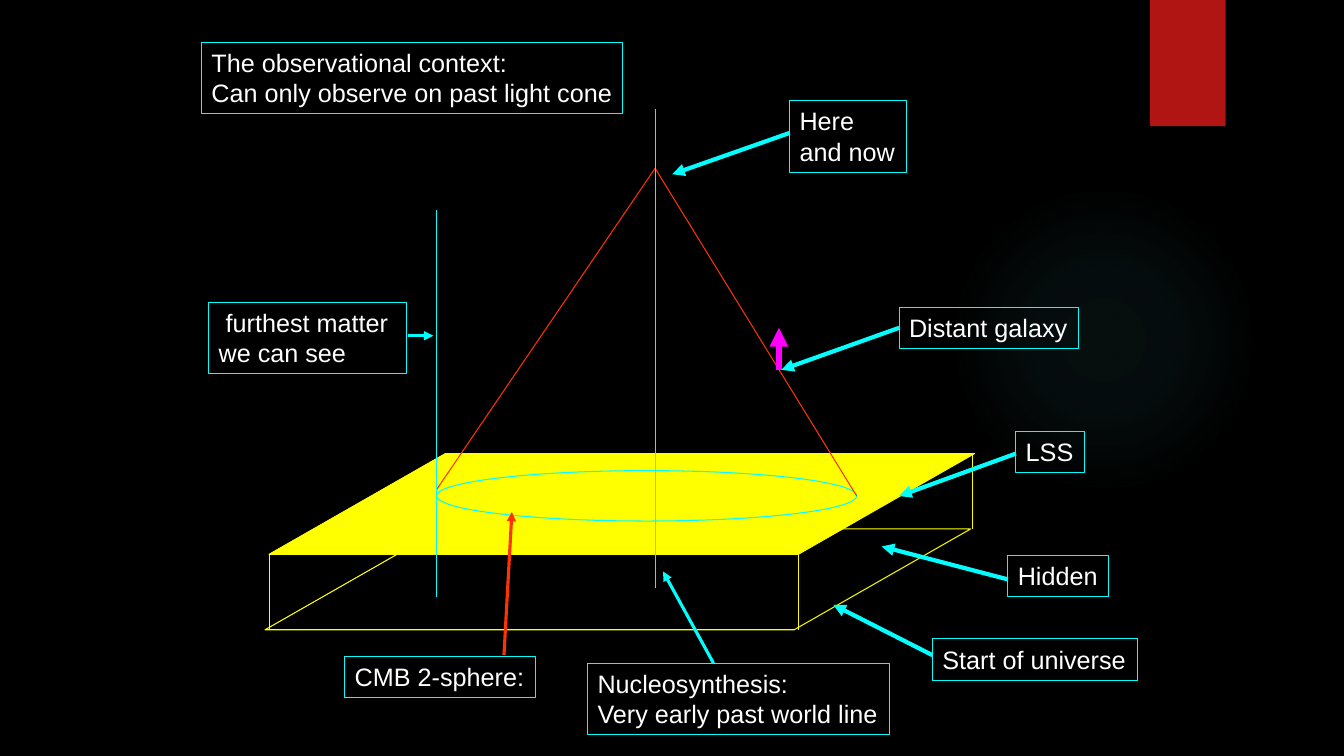
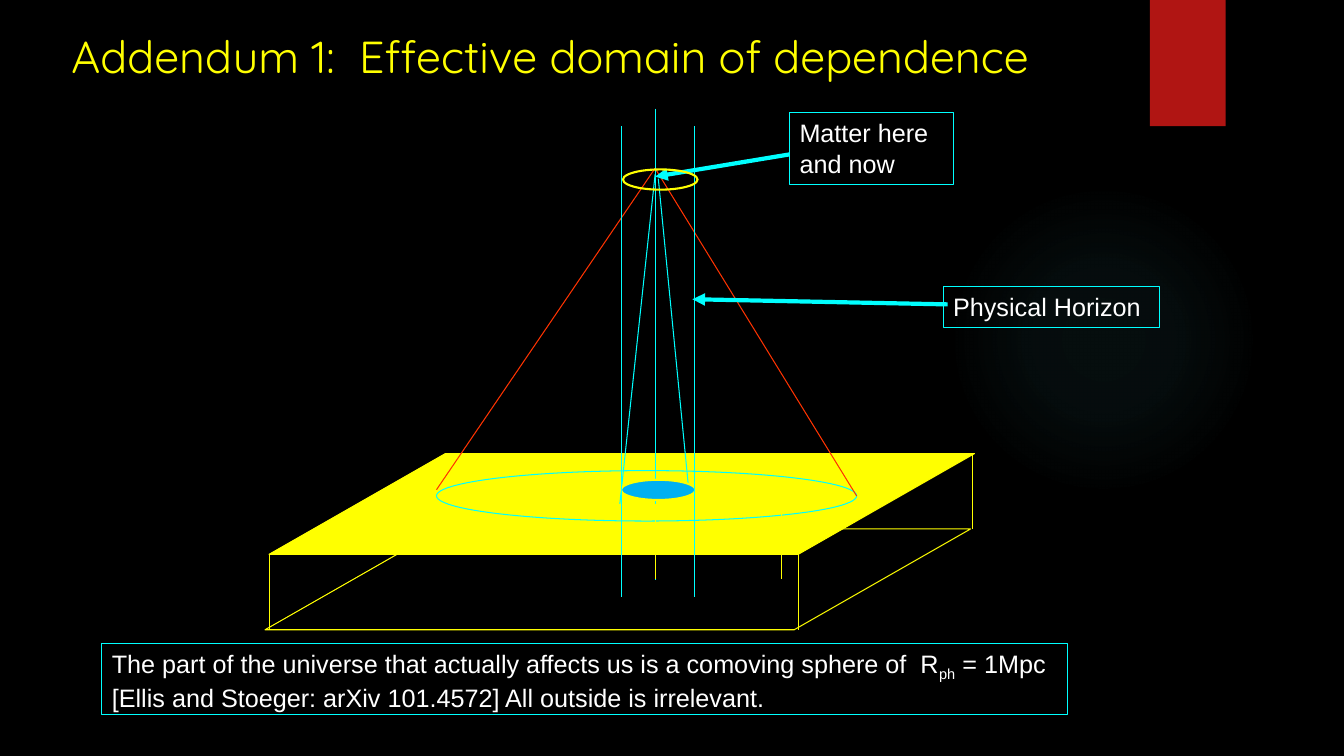
from dataclasses import dataclass
from typing import Any

from lxml.etree import SubElement
from pptx import Presentation
from pptx.dml.color import RGBColor
from pptx.enum.dml import MSO_LINE
from pptx.enum.shapes import MSO_CONNECTOR, MSO_SHAPE
from pptx.enum.text import MSO_ANCHOR, MSO_AUTO_SIZE, PP_ALIGN
from pptx.oxml import parse_xml
from pptx.oxml.ns import qn
from pptx.util import Cm, Pt

BLACK, WHITE, YELLOW = "000000", "FFFFFF", "FFFF00"
CYAN, RED, MAGENTA, BLUE = "00FFFF", "FF3300", "FF00FF", "00B0F0"
GLOW, TAB = "50B9C1", "B01513"
BODY_FONT, TITLE_FONT = "Arial", "Quicksand"
ONE_LINE, TWO_LINES = 1.04, 1.8
HAIRLINE = 0.75


def rgb(hex_code):
    return RGBColor.from_string(hex_code)


def add_run(paragraph, text, size, font, color, baseline=0):
    run = paragraph.add_run()
    run.text = text
    run.font.size = Pt(size)
    run.font.name = font
    run.font.color.rgb = rgb(color)
    if baseline:
        run._r.get_or_add_rPr().set("baseline", str(baseline * 1000))


@dataclass
class Stage:
    """An area of a slide; all its parts are placed in cm from its corner."""
    slide: Any
    left: float = 0
    top: float = 0

    def line(self, start, end, color=CYAN, width=HAIRLINE, arrow=False, dash=None):
        (x1, y1), (x2, y2) = start, end
        connector = self.slide.shapes.add_connector(
            MSO_CONNECTOR.STRAIGHT,
            Cm(self.left + x1), Cm(self.top + y1),
            Cm(self.left + x2), Cm(self.top + y2))
        connector.line.color.rgb = rgb(color)
        connector.line.width = Pt(width)
        if dash:
            connector.line.dash_style = dash
        if arrow:
            SubElement(connector.line._get_or_add_ln(), qn("a:tailEnd"), type="triangle")
        SubElement(connector._element.spPr, qn("a:effectLst"))

    def shape(self, kind, x, y, width, height, fill=None, outline=None, weight=HAIRLINE):
        shape = self.slide.shapes.add_shape(
            kind, Cm(self.left + x), Cm(self.top + y), Cm(width), Cm(height))
        shape.shadow.inherit = False
        if fill:
            shape.fill.solid()
            shape.fill.fore_color.rgb = rgb(fill)
        else:
            shape.fill.background()
        if outline:
            shape.line.color.rgb = rgb(outline)
            shape.line.width = Pt(weight)
        else:
            shape.line.fill.background()
        return shape

    def label(self, x, y, width, paragraphs, first_indent=0):
        """Framed text; each paragraph is a list of (text, baseline) runs."""
        height = TWO_LINES if len(paragraphs) > 1 else ONE_LINE
        frame = self.shape(MSO_SHAPE.RECTANGLE, x, y, width, height, outline=CYAN).text_frame
        frame.word_wrap = False
        frame.auto_size = MSO_AUTO_SIZE.SHAPE_TO_FIT_TEXT
        frame.vertical_anchor = MSO_ANCHOR.TOP
        for number, runs in enumerate(paragraphs):
            paragraph = frame.add_paragraph() if number else frame.paragraphs[0]
            paragraph.alignment = PP_ALIGN.LEFT
            if first_indent and not number:
                paragraph._p.get_or_add_pPr().set("indent", str(Cm(first_indent)))
            for text, baseline in runs:
                add_run(paragraph, text, 18, BODY_FONT, WHITE, baseline)

    def callout(self, x, y, width, lines, start, end, color=CYAN, weight=3, first_indent=0):
        self.label(x, y, width, [[(line, 0)] for line in lines], first_indent)
        self.line(start, end, color, weight, arrow=True)


def add_glow(stage):
    glow = stage.shape(MSO_SHAPE.OVAL, 23.9, 4.65, 7.82, 7.82, fill=GLOW)
    stops = "".join(
        f'<a:gs pos="{place * 1000}"><a:srgbClr val="{GLOW}">'
        f'<a:alpha val="{alpha * 1000}"/></a:srgbClr></a:gs>'
        for place, alpha in ((0, 7), (36, 6), (69, 0)))
    gradient = parse_xml(
        '<a:gradFill xmlns:a="http://schemas.openxmlformats.org/drawingml/2006/main">'
        f'<a:gsLst>{stops}</a:gsLst><a:path path="circle">'
        '<a:fillToRect l="50000" t="50000" r="50000" b="50000"/></a:path></a:gradFill>')
    properties = glow._element.spPr
    properties.replace(properties.find(qn("a:solidFill")), gradient)


def new_stage(deck):
    """Blank slide with the shared dark background, glow and red tab."""
    slide = deck.slides.add_slide(deck.slide_layouts[6])
    slide.background.fill.solid()
    slide.background.fill.fore_color.rgb = rgb(BLACK)
    stage = Stage(slide)
    add_glow(stage)
    stage.shape(MSO_SHAPE.RECTANGLE, 28.98, 0, 1.91, 3.18, fill=TAB)
    return stage


def add_slab(stage):
    """Last scattering surface above the start of the universe."""
    width, depth, drop = 17.78, 2.54, 1.9
    skew = 1.75 * depth
    for x, y, fill in ((0.1, 0, YELLOW), (0, drop, None)):
        sheet = stage.shape(MSO_SHAPE.PARALLELOGRAM, x, y, width, depth, fill, YELLOW)
        sheet.adjustments[0] = skew / depth
    for x, y, dash in ((0.1, depth, None), (0.1 + width - skew, depth, None),
                       (0.05 + width, 0, None), (0.1 + skew, 0.28, MSO_LINE.DASH_DOT)):
        stage.line((x, y), (x, y + drop), YELLOW, dash=dash)


def add_light_cone(stage, world_line_end):
    """Past light cone standing on the slab, with our world line."""
    axis, apex = 9.83, 1.5
    add_slab(Stage(stage.slide, stage.left, stage.top + 8.69))
    stage.shape(MSO_SHAPE.OVAL, 4.32, 9.12, 10.59, 1.27, outline=CYAN)
    for foot in ((4.32, 9.6), (14.91, 9.76)):
        stage.line((axis, apex), foot, RED)
    stage.line((axis, 0), (axis, world_line_end))


def add_title(stage, text):
    box = stage.slide.shapes.add_textbox(
        Cm(stage.left + 1.55), Cm(stage.top + 0.61), Cm(27.7), Cm(3.18))
    box.text_frame.word_wrap = True
    add_run(box.text_frame.paragraphs[0], text, 32, TITLE_FONT, YELLOW)


def context_slide(deck):
    stage = new_stage(deck)
    add_light_cone(Stage(stage.slide, 6.68, 2.74), 9.76)
    stage.line((16.51, 5.08), (16.51, 14.81))
    stage.line((11, 5.28), (11, 15.04))
    stage.label(5.08, 1.07, 10.62, [[("The observational context:", 0)],
                                    [("Can only observe on past light cone", 0)]])
    stage.line((19.63, 9.32), (19.63, 8.26), MAGENTA, 4.5, arrow=True)
    for x, y, width, lines, start, end in (
            (19.9, 2.54, 2.95, ["Here", "and now"], (19.9, 3.35), (16.94, 4.39)),
            (22.66, 7.75, 4.52, ["Distant galaxy"], (22.66, 8.26), (19.69, 9.32)),
            (25.6, 10.87, 1.73, ["LSS"], (25.6, 11.43), (22.66, 12.5)),
            (25.4, 14, 2.54, ["Hidden"], (25.4, 14.6), (22.22, 13.77)),
            (23.5, 16.1, 5.16, ["Start of universe"], (23.5, 16.51), (21, 15.24))):
        stage.callout(x, y, width, lines, start, end)
    stage.callout(8.69, 16.54, 4.8, ["CMB 2-sphere:"],
                  (12.7, 16.51), (12.9, 12.9), RED, 2.25)
    stage.callout(5.26, 7.62, 4.98, ["furthest matter", "we can see"],
                  (10.29, 8.46), (10.92, 8.46), weight=2.25, first_indent=0.18)
    stage.callout(14.81, 16.71, 7.62, ["Nucleosynthesis:", "Very early past world line"],
                  (17.98, 16.71), (16.71, 14.4), weight=2.25)


def add_horizon(stage):
    """Comoving tube around our world line, with its inner cone."""
    stage.line((0.84, 1.21), (-0.05, 9.52))
    stage.line((0.92, 1.32), (1.7, 9.29))
    stage.shape(MSO_SHAPE.OVAL, -0.02, 8.91, 1.88, 0.51, BLUE, YELLOW, 1.5)
    for x in (0, 1.83):
        stage.line((x, 0), (x, 11.86))
    stage.shape(MSO_SHAPE.OVAL, 0.03, 1.09, 1.88, 0.51, outline=YELLOW, weight=1.5)


def dependence_slide(deck):
    stage = new_stage(deck)
    add_light_cone(Stage(stage.slide, 6.68, 2.74), 11.87)
    stage.callout(19.9, 2.84, 4.14, ["Matter here", "and now"], (19.9, 3.89), (16.51, 4.45))
    for x in (16.51, 19.69):
        stage.line((x, 12.7), (x, 14.6), YELLOW)
    stage.callout(23.77, 7.21, 5.46, ["Physical Horizon"], (23.88, 7.67), (17.45, 7.54))
    add_title(stage, "Addendum 1:  Effective domain of dependence")
    stage.label(2.57, 16.21, 24.33, [
        [("The part of the universe that actually affects us is a comoving sphere of  R", 0),
         ("ph", -25), (" = 1Mpc", 0)],
        [("[Ellis and Stoeger: arXiv 101.4572] All outside is irrelevant.", 0)]])
    add_horizon(Stage(stage.slide, 15.67, 3.18))


def main():
    deck = Presentation()
    deck.slide_width, deck.slide_height = Cm(33.87), Cm(19.05)
    context_slide(deck)
    dependence_slide(deck)
    deck.save("out.pptx")


if __name__ == "__main__":
    main()
